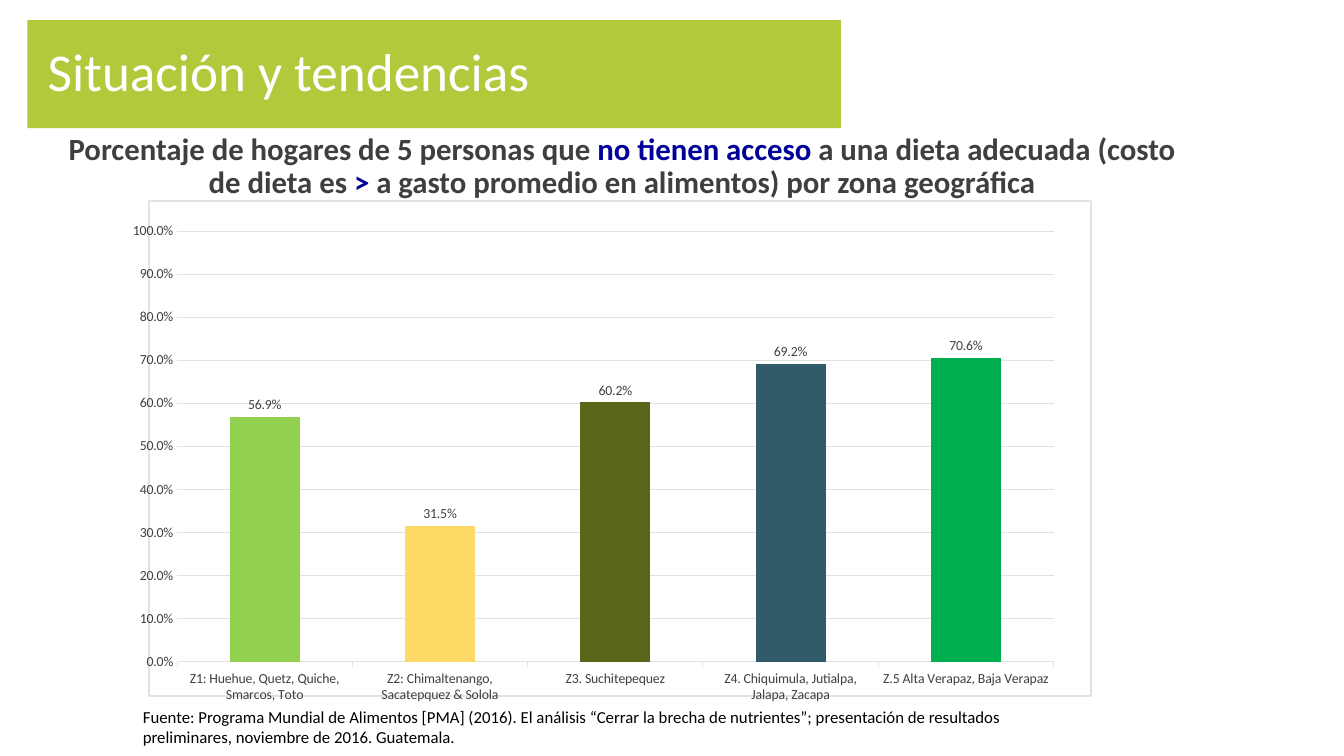
"""Build the slide on households without access to an adequate diet."""
from lxml import etree
from pptx import Presentation
from pptx.chart.data import CategoryChartData
from pptx.dml.color import RGBColor
from pptx.enum.chart import XL_CHART_TYPE as ChartType
from pptx.enum.chart import XL_LABEL_POSITION as LabelPosition
from pptx.enum.chart import XL_TICK_MARK as TickMark
from pptx.enum.shapes import MSO_SHAPE as Preset
from pptx.enum.text import MSO_ANCHOR as Anchor
from pptx.enum.text import PP_ALIGN as Align
from pptx.oxml import parse_xml
from pptx.util import Cm, Pt

WHITE = RGBColor(0xFF, 0xFF, 0xFF)
BLACK = RGBColor(0x00, 0x00, 0x00)
LIME = RGBColor(0xB3, 0xC8, 0x3B)
DARK_GRAY = RGBColor(0x3F, 0x3F, 0x3F)
LIGHT_GRAY = RGBColor(0xE2, 0xE2, 0xE2)
NAVY = RGBColor(0x00, 0x00, 0x99)
FONT = "Calibri"

TITLE = "Situación y tendencias"
QUESTION = [
    ("Porcentaje de hogares de 5 personas que ", DARK_GRAY),
    ("no tienen acceso ", NAVY),
    ("a una dieta adecuada (costo de dieta es ", DARK_GRAY),
    (">", NAVY),
    (" a gasto promedio en alimentos) por zona geográfica", DARK_GRAY),
]
ZONES = [
    ("Z1: Huehue, Quetz, Quiche, Smarcos, Toto", 0.569, RGBColor(0x92, 0xD0, 0x50)),
    ("Z2: Chimaltenango, Sacatepquez & Solola", 0.315, RGBColor(0xFF, 0xD9, 0x66)),
    ("Z3. Suchitepequez", 0.602, RGBColor(0x5A, 0x65, 0x1C)),
    ("Z4. Chiquimula, Jutialpa, Jalapa, Zacapa", 0.692, RGBColor(0x32, 0x5B, 0x69)),
    ("Z.5 Alta Verapaz, Baja Verapaz", 0.706, RGBColor(0x00, 0xB0, 0x50)),
]
SOURCE = (
    "Fuente: Programa Mundial de Alimentos [PMA] (2016). El análisis “Cerrar la brecha "
    "de nutrientes”; presentación de resultados preliminares, noviembre de 2016. Guatemala."
)

TITLE_BOX = (Cm(0.69), Cm(0.51), Cm(20.5), Cm(2.72))
QUESTION_BOX = (Cm(1.07), Cm(3.25), Cm(29.21), Cm(1.6))
CHART_BOX = (Cm(3.35), Cm(5.05), Cm(24.18), Cm(12.65))
SOURCE_BOX = (Cm(3.35), Cm(17.68), Cm(24.18), Cm(1.27))
PLOT_AREA = {"x": 0.03, "y": 0.06, "w": 0.93, "h": 0.87}
PERCENT = "0.0%"

CHART_NS = "http://schemas.openxmlformats.org/drawingml/2006/chart"
DRAWING_NS = "http://schemas.openxmlformats.org/drawingml/2006/main"


def style(font, size, color, bold=False):
    font.name, font.size, font.bold = FONT, Pt(size), bold
    font.color.rgb = color


def add_title(slide):
    banner = slide.shapes.add_shape(Preset.RECTANGLE, *TITLE_BOX)
    banner.shadow.inherit = False
    banner.fill.solid()
    banner.fill.fore_color.rgb = LIME
    banner.line.fill.background()
    frame = banner.text_frame
    frame.text = TITLE
    frame.word_wrap = True
    frame.vertical_anchor = Anchor.MIDDLE
    frame.margin_left, frame.margin_right = Cm(0.51), Cm(2.79)
    heading = frame.paragraphs[0]
    heading.alignment, heading.line_spacing = Align.LEFT, 0.9
    style(heading.runs[0].font, 38, WHITE)


def add_text(slide, box, pieces, size, bold=False):
    frame = slide.shapes.add_textbox(*box).text_frame
    frame.word_wrap = True
    paragraph = frame.paragraphs[0]
    for words, color in pieces:
        run = paragraph.add_run()
        run.text = words
        style(run.font, size, color, bold)
    return paragraph


def set_chart_frame(chart):
    """Give the chart a white ground, a thin border and a fixed plot area."""
    border = parse_xml(
        f'<c:spPr xmlns:c="{CHART_NS}" xmlns:a="{DRAWING_NS}">'
        f'<a:solidFill><a:srgbClr val="{WHITE}"/></a:solidFill>'
        f'<a:ln w="{Pt(1.5)}"><a:solidFill><a:srgbClr val="{LIGHT_GRAY}"/></a:solidFill></a:ln>'
        "</c:spPr>"
    )
    chart_root = chart.element.find(f"{{{CHART_NS}}}chart")
    chart_root.addnext(border)
    plot_area = chart_root.find(f"{{{CHART_NS}}}plotArea")
    for old_layout in plot_area.findall(f"{{{CHART_NS}}}layout"):
        plot_area.remove(old_layout)
    layout = etree.Element(f"{{{CHART_NS}}}layout")
    manual = etree.SubElement(layout, f"{{{CHART_NS}}}manualLayout")
    settings = {"layoutTarget": "inner", "xMode": "edge", "yMode": "edge", **PLOT_AREA}
    for tag, value in settings.items():
        etree.SubElement(manual, f"{{{CHART_NS}}}{tag}").set("val", str(value))
    plot_area.insert(0, layout)


def add_zone_chart(slide):
    names, shares, colors = zip(*ZONES)
    data = CategoryChartData(number_format=PERCENT)
    data.categories = names
    data.add_series("Hogares", shares)
    chart = slide.shapes.add_chart(ChartType.COLUMN_CLUSTERED, *CHART_BOX, data).chart
    chart.has_title = chart.has_legend = False
    style(chart.font, 10, DARK_GRAY)
    set_chart_frame(chart)

    zone_axis = chart.category_axis
    zone_axis.major_tick_mark = TickMark.OUTSIDE
    share_axis = chart.value_axis
    share_axis.major_tick_mark = TickMark.NONE
    share_axis.minimum_scale, share_axis.maximum_scale = 0, 1
    share_axis.major_unit = 0.1
    share_axis.tick_labels.number_format = PERCENT
    share_axis.tick_labels.number_format_is_linked = False
    share_axis.format.line.fill.background()
    for line in (zone_axis.format.line, share_axis.major_gridlines.format.line):
        line.color.rgb, line.width = LIGHT_GRAY, Pt(0.75)

    plot = chart.plots[0]
    plot.gap_width, plot.vary_by_categories = 150, False
    plot.has_data_labels = True
    labels = plot.data_labels
    labels.show_value, labels.position = True, LabelPosition.OUTSIDE_END
    labels.number_format, labels.number_format_is_linked = PERCENT, False
    style(labels.font, 10, DARK_GRAY)
    for index, color in enumerate(colors):
        fill = plot.series[0].points[index].format.fill
        fill.solid()
        fill.fore_color.rgb = color


def main():
    deck = Presentation()
    deck.slide_width, deck.slide_height = Cm(33.87), Cm(19.05)
    slide = deck.slides.add_slide(deck.slide_layouts[6])
    question = add_text(slide, QUESTION_BOX, QUESTION, 22, bold=True)
    question.alignment, question.line_spacing = Align.CENTER, 0.9
    add_zone_chart(slide)
    add_title(slide)
    add_text(slide, SOURCE_BOX, [(SOURCE, BLACK)], 12)
    deck.save("out.pptx")


if __name__ == "__main__":
    main()
